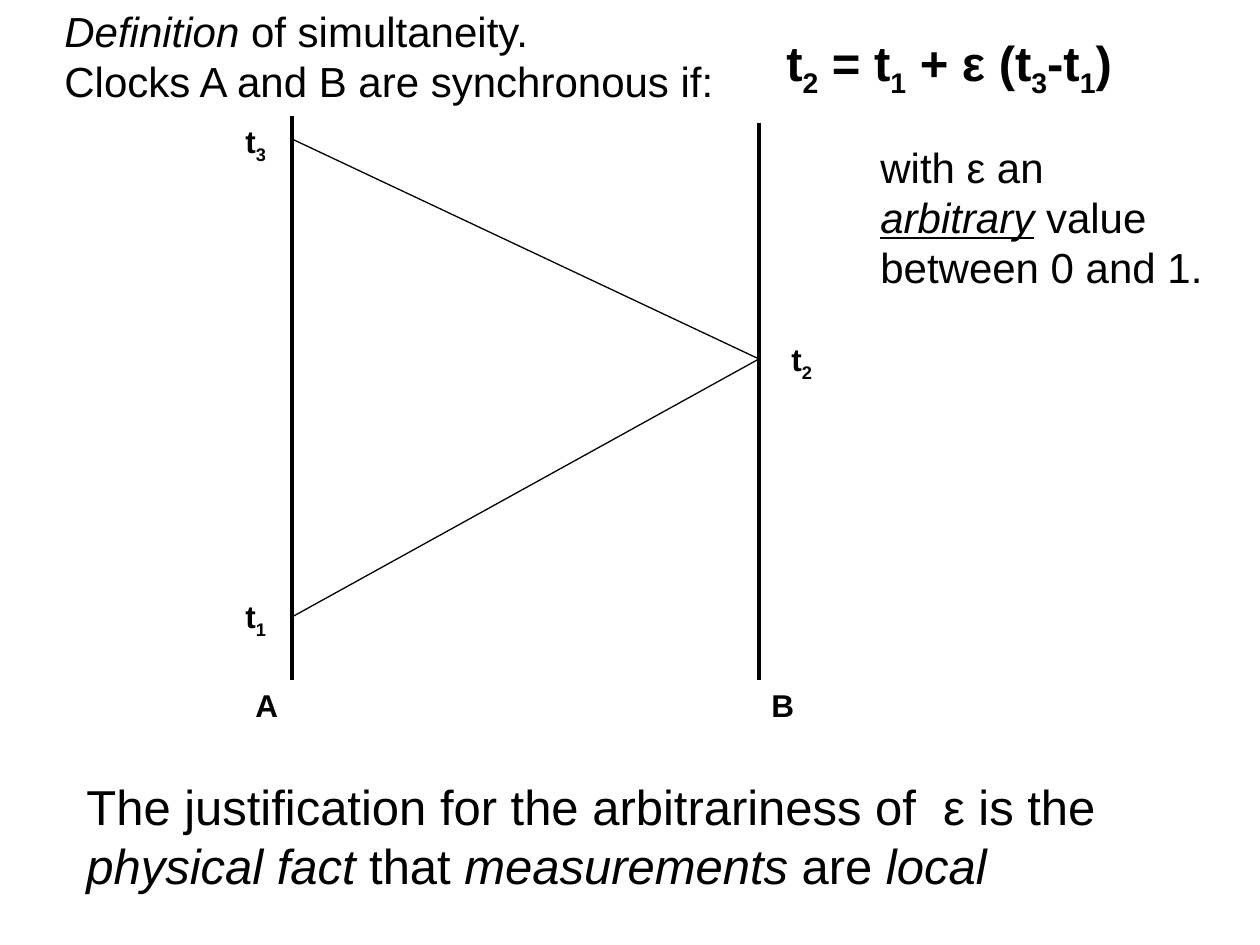
from lxml import etree
from pptx import Presentation, util as u
from pptx.dml.color import RGBColor
from pptx.enum import shapes, text
from pptx.oxml.ns import qn

PX = u.Inches(1) / 126
BLACK = RGBColor(0, 0, 0)


def px(*lengths):
    return [u.Emu(round(n * PX)) for n in lengths]


def write(paragraphs, box, size=18, bold=False, wrap=False):
    """Each paragraph lists (words, marks): i italic, u underlined, _ subscript."""
    frame = slide.shapes.add_textbox(*px(*box)).text_frame
    frame.word_wrap = wrap
    frame.auto_size = text.MSO_AUTO_SIZE.SHAPE_TO_FIT_TEXT
    for i, runs in enumerate(paragraphs):
        paragraph = frame.add_paragraph() if i else frame.paragraphs[0]
        for words, marks in runs:
            run = paragraph.add_run()
            run.text = words
            font = run.font
            font.name, font.size, font.bold = "Arial", u.Pt(size), bold
            font.color.rgb = BLACK
            font.italic = "i" in marks
            font.underline = "u" in marks
            if "_" in marks:
                run._r.get_or_add_rPr().set("baseline", "-25000")


prs = Presentation()
prs.slide_width, prs.slide_height = px(1260, 945)
slide = prs.slides.add_slide(prs.slide_layouts[6])

# Clock names
clock_a, clock_b, clock_foot = 292, 759, 680
for name, left in (("A", 243), ("B", 759)):
    write([[(name, "")]], (left, clock_foot, 48, 50), bold=True)

# World lines of the clocks, then the light signal out and back
sent, reflected, returned = 617, 359, 139
for x1, y1, x2, y2, weight in (
    (clock_a, 116, clock_a, clock_foot, 2.25),
    (clock_b, 123, clock_b, clock_foot, 2.25),
    (clock_a, sent, clock_b, reflected, 0.75),
    (clock_b, reflected, clock_a, returned, 0.75),
):
    line = slide.shapes.add_connector(
        shapes.MSO_CONNECTOR.STRAIGHT, *px(x1, y1, x2, y2))
    line.line.color.rgb = BLACK
    line.line.width = u.Pt(weight)
    etree.SubElement(line._element.spPr, qn("a:effectLst"))

# Times of the events
for index, left, top in (("1", 233, 591), ("3", 233, 116), ("2", 779, 334)):
    write([[("t", ""), (index, "_")]], (left, top, 48, 50), bold=True)

# Synchrony formula
write([[("t", ""), ("2", "_"), (" = t", ""), ("1", "_"), (" + ε (t", ""),
        ("3", "_"), ("-t", ""), ("1", "_"), (")", "")]],
      (774, 26, 363, 72), size=28, bold=True)

# Definition, condition and conclusion
write([[("Definition", "i"), (" of simultaneity.", "")],
       [("Clocks A and B are synchronous if:", "")]],
      (52, -1, 680, 115), size=24)
write([[("with ε an", "")],
       [("arbitrary", "iu"), (" value", "")],
       [("between 0 and 1.", "")]],
      (868, 135, 367, 164), size=24, wrap=True)
write([[("The justification for the arbitrariness of  ε is the ", ""),
        ("physical fact ", "i"), ("that ", ""), ("measurements", "i"),
        (" are ", ""), ("local", "i")]],
      (74, 770, 1042, 131), size=28, wrap=True)

prs.save("out.pptx")
